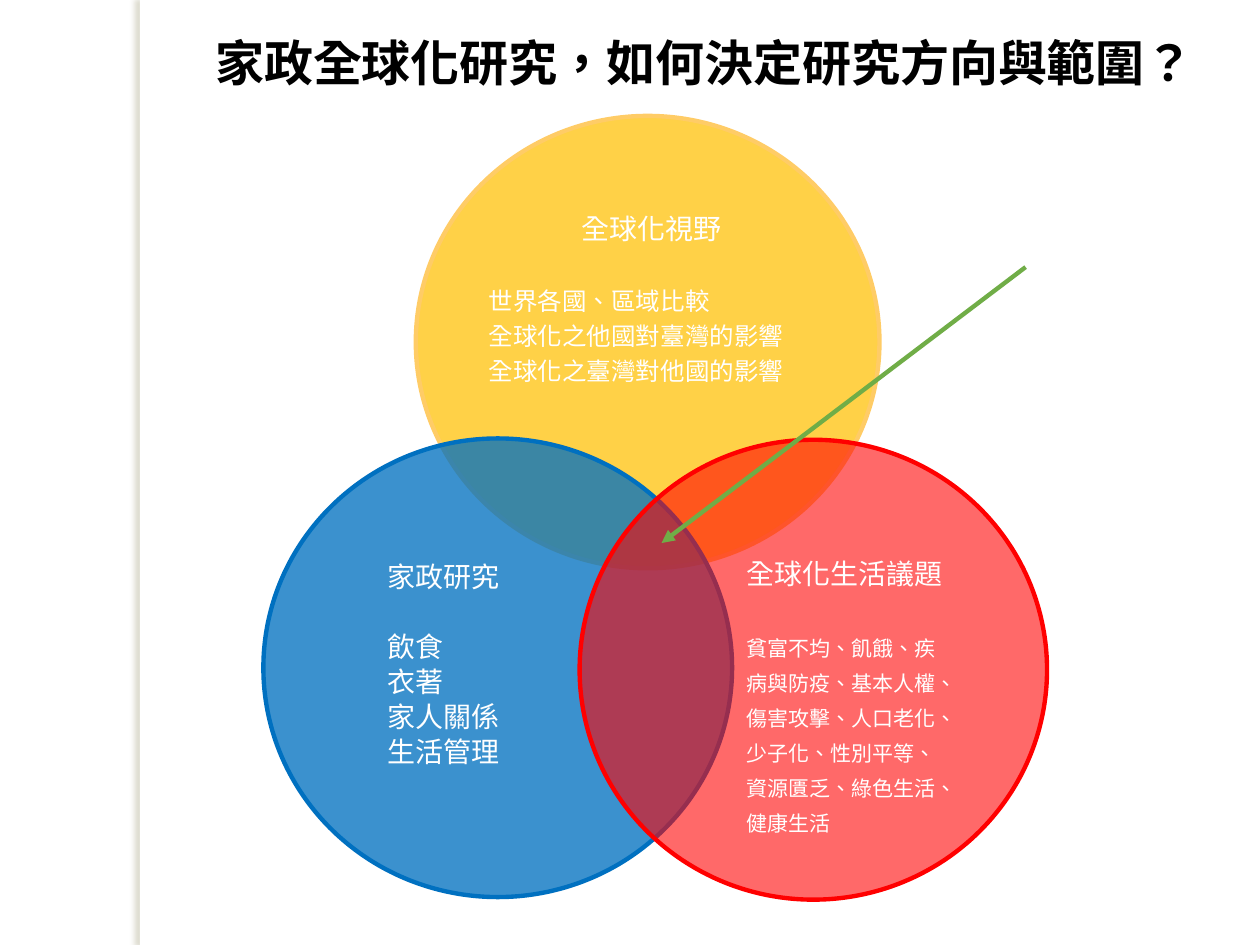
from dataclasses import dataclass

from lxml import etree
from pptx import Presentation
from pptx.dml.color import RGBColor
from pptx.enum.lang import MSO_LANGUAGE_ID
from pptx.enum.shapes import MSO_CONNECTOR, MSO_SHAPE
from pptx.enum.text import MSO_AUTO_SIZE, PP_ALIGN
from pptx.oxml import parse_xml
from pptx.oxml.ns import nsdecls, qn
from pptx.util import Inches, Pt

OVAL, RECT = MSO_SHAPE.OVAL, MSO_SHAPE.RECTANGLE
LINE = MSO_CONNECTOR.STRAIGHT
LEFT, MID = PP_ALIGN.LEFT, PP_ALIGN.CENTER
GROW = MSO_AUTO_SIZE.SHAPE_TO_FIT_TEXT
LANG = MSO_LANGUAGE_ID.TRADITIONAL_CHINESE

WIDE, HIGH = Inches(10), Inches(7.5)
COLS, ROWS = 100, 75


@dataclass(frozen=True)
class Theme:
    font: str = "Calibri"
    black: str = "000000"
    white: str = "FFFFFF"
    shade: str = "817B4C"
    gold: str = "FFC000"
    sand: str = "FFCC66"
    blue: str = "0070C0"
    red: str = "FF0000"
    green: str = "70AD47"
    title: int = 28
    head: int = 16
    body: int = 14
    small: int = 12
    pitch: int = 20
    edge: float = 2.5


THEME = Theme()


@dataclass(frozen=True)
class Topic:
    box: tuple
    area: tuple
    fill: str
    edge: str
    alpha: int
    head: str
    lines: tuple
    size: int
    align: PP_ALIGN = LEFT


TOPICS = (
    Topic((33, 9.2, 36.8, 35.9), (4.8, 7, 27.8, 14.4),
          THEME.gold, THEME.sand, 72, "全球化視野",
          ("世界各國、區域比較", "全球化之他國對臺灣的影響", "全球化之臺灣對他國的影響"),
          THEME.body, MID),
    Topic((20.9, 34.8, 37.2, 36.4), (8.9, 9, 13.5, 17.1),
          THEME.blue, THEME.blue, 77, "家政研究",
          ("飲食", "衣著", "家人關係", "生活管理"), THEME.head),
    Topic((46, 34.9, 37.1, 36.5), (12.3, 8.7, 18.3, 22.4),
          THEME.red, THEME.red, 59, "全球化生活議題",
          ("貧富不均、飢餓、疾病與防疫、基本人權、傷害攻擊、人口老化、"
           "少子化、性別平等、資源匱乏、綠色生活、健康生活",), THEME.small),
)


def place(box):
    x, y, w, h = box
    return (round(x * WIDE / COLS), round(y * HIGH / ROWS),
            round(w * WIDE / COLS), round(h * HIGH / ROWS))


def tint(code):
    return RGBColor.from_string(code)


def style(para, size, color, bold=False):
    font = para.font
    font.name = THEME.font
    font.size = Pt(size)
    font.bold = bold
    font.color.rgb = tint(color)
    font.language_id = LANG


def solid(slide, kind, box, fill):
    shape = slide.shapes.add_shape(kind, *place(box))
    shape.shadow.inherit = False
    shape.fill.solid()
    shape.fill.fore_color.rgb = tint(fill)
    return shape


def write(slide, box, wrap=True):
    frame = slide.shapes.add_textbox(*place(box)).text_frame
    frame.word_wrap = wrap
    frame.auto_size = GROW
    return frame


def draw_edge(slide, box):
    strip = solid(slide, RECT, box, THEME.white)
    strip.line.fill.background()
    blur = Pt(3)
    shade = parse_xml(
        f'<a:outerShdw {nsdecls("a")} blurRad="{blur}" dist="{blur}" '
        f'dir="10800000" algn="r" rotWithShape="0">'
        f'<a:srgbClr val="{THEME.shade}"><a:alpha val="25000"/></a:srgbClr>'
        f'</a:outerShdw>')
    strip.element.spPr.find(qn("a:effectLst")).append(shade)


def draw_title(slide, box):
    para = write(slide, box, False).paragraphs[0]
    para.text = "家政全球化研究，如何決定研究方向與範圍？"
    style(para, THEME.title, THEME.black, True)


def draw_topic(slide, box, topic):
    disc = solid(slide, OVAL, box, topic.fill)
    color = disc.element.spPr.find(qn("a:solidFill"))[0]
    etree.SubElement(color, qn("a:alpha"), val=str(topic.alpha * 1000))
    disc.line.color.rgb = tint(topic.edge)
    disc.line.width = Pt(THEME.edge)

    x, y, w, h = topic.area
    frame = write(slide, (box[0] + x, box[1] + y, w, h))
    head = frame.paragraphs[0]
    head.text = topic.head
    head.alignment = topic.align
    head.space_after = Pt(THEME.pitch)
    style(head, THEME.head, THEME.white)
    for line in topic.lines:
        para = frame.add_paragraph()
        para.text = line
        style(para, topic.size, THEME.white)
    for para in frame.paragraphs:
        para.line_spacing = Pt(THEME.pitch)


def draw_arrow(slide, box):
    x, y, w, h = place(box)
    arrow = slide.shapes.add_connector(LINE, x + w, y, x, y + h)
    arrow.line.color.rgb = tint(THEME.green)
    arrow.line.width = Pt(THEME.edge)
    props = arrow.element.spPr
    etree.SubElement(props.find(qn("a:ln")), qn("a:tailEnd"), type="triangle")
    etree.SubElement(props, qn("a:effectLst"))


def main():
    deck = Presentation()
    deck.slide_width, deck.slide_height = WIDE, HIGH
    slide = deck.slides.add_slide(deck.slide_layouts[6])
    draw_edge(slide, (11.1, 0, 0.8, ROWS))
    draw_title(slide, (16.1, 2.1, 80.6, 5.7))
    for topic in TOPICS:
        draw_topic(slide, topic.box, topic)
    draw_arrow(slide, (52.5, 21.2, 28.9, 21.9))
    deck.save("out.pptx")


if __name__ == "__main__":
    main()
